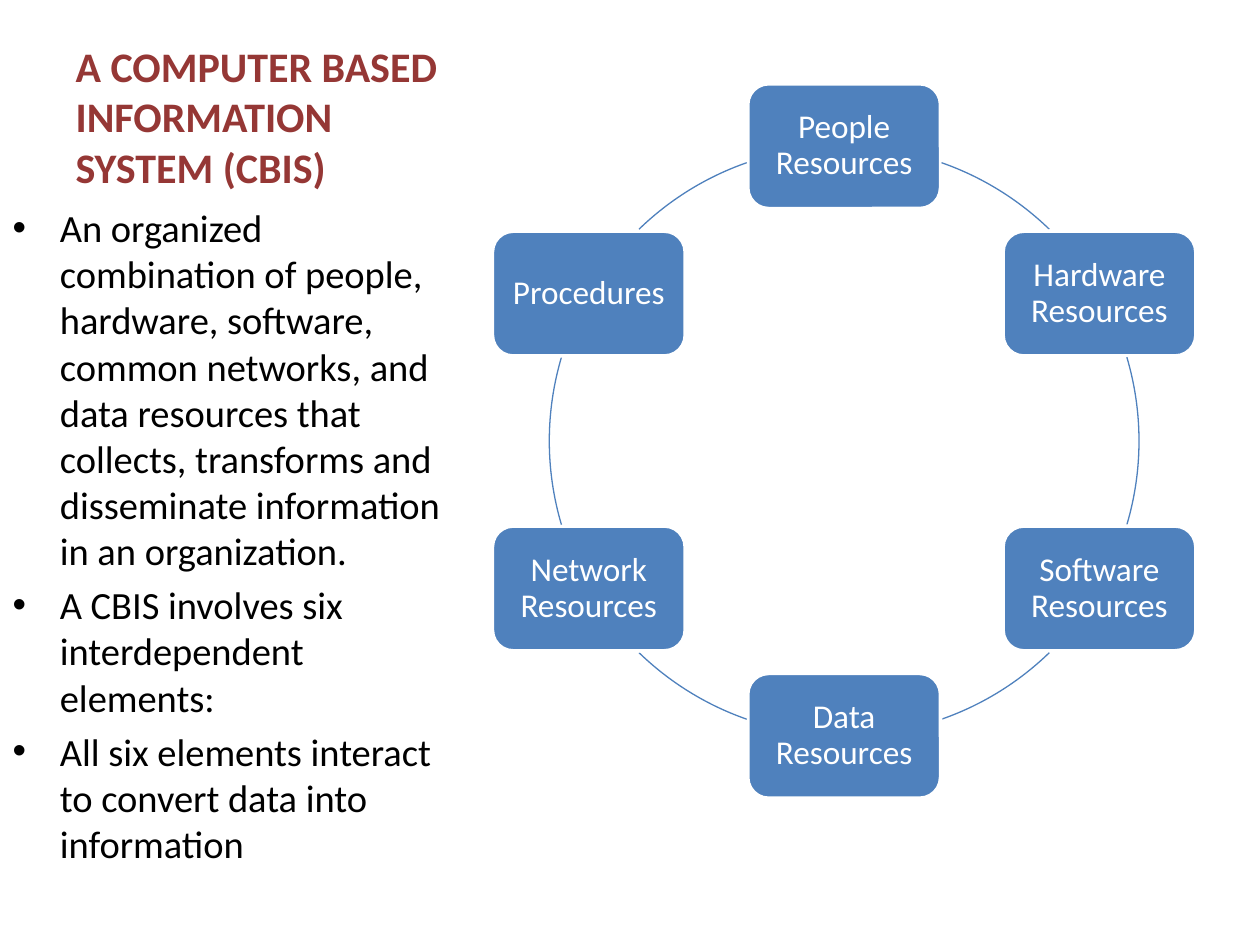
"""Builds the slide on the six elements of a computer based information system."""
import math
from dataclasses import dataclass

from pptx import Presentation
from pptx import util as u
from pptx.dml.color import RGBColor
from pptx.enum import shapes, text

BLUE, WHITE, BLACK, RED = "4F81BD", "FFFFFF", "000000", "953735"
CENTER_X, CENTER_Y, RADIUS = 6.7, 3.5, 2.34
NODE_W, NODE_H = 1.53, 0.99
POINTS = [
    "An organized combination of people, hardware, software, common networks, and "
    "data resources that collects, transforms and disseminate information in an organization.",
    "A CBIS involves six interdependent elements:",
    "All six elements interact to convert data into information",
]


@dataclass
class Element:
    label: str
    angle: float
    arc_start: float
    arc_end: float


ELEMENTS = [
    Element("People Resources", 270, 289.3, 314.1),
    Element("Hardware Resources", 330, 343.5, 16.5),
    Element("Software Resources", 30, 45.9, 70.7),
    Element("Data Resources", 90, 109.3, 134.1),
    Element("Network Resources", 150, 163.5, 196.5),
    Element("Procedures", 210, 225.9, 250.7),
]


def color(target, value: str) -> None:
    target.rgb = RGBColor.from_string(value)


def apply(target, formats: dict) -> None:
    for name, value in formats.items():
        setattr(target, name, value)


def format_font(font, size: float, value: str, bold: bool = False) -> None:
    apply(font, {"name": "Calibri", "size": u.Pt(size), "bold": bold})
    color(font.color, value)


def place(placeholder, left: float, top: float, width: float, height: float) -> None:
    apply(placeholder, {"left": u.Inches(left), "top": u.Inches(top),
                        "width": u.Inches(width), "height": u.Inches(height)})


def draw_node(slide, element: Element) -> None:
    angle = math.radians(element.angle)
    left = CENTER_X + RADIUS * math.cos(angle) - NODE_W / 2
    top = CENTER_Y + RADIUS * math.sin(angle) - NODE_H / 2
    node = slide.shapes.add_shape(shapes.MSO_SHAPE.ROUNDED_RECTANGLE, u.Inches(left),
                                  u.Inches(top), u.Inches(NODE_W), u.Inches(NODE_H))
    node.shadow.inherit = False
    node.fill.solid()
    color(node.fill.fore_color, BLUE)
    color(node.line.color, WHITE)
    node.line.width = u.Pt(2)
    frame = node.text_frame
    sides = ("left", "right", "top", "bottom")
    apply(frame, {f"margin_{side}": u.Inches(0.08) for side in sides})
    apply(frame, {"word_wrap": True, "vertical_anchor": text.MSO_ANCHOR.MIDDLE,
                  "text": element.label})
    label = frame.paragraphs[0]
    apply(label, {"alignment": text.PP_ALIGN.CENTER, "line_spacing": 0.9})
    format_font(label.runs[0].font, 19, WHITE)


def draw_arc(slide, element: Element) -> None:
    arc = slide.shapes.add_shape(
        shapes.MSO_SHAPE.ARC, u.Inches(CENTER_X - RADIUS), u.Inches(CENTER_Y - RADIUS),
        u.Inches(2 * RADIUS), u.Inches(2 * RADIUS))
    for index, degrees in enumerate((element.arc_start, element.arc_end)):
        arc.adjustments[index] = degrees * 0.6
    arc.shadow.inherit = False
    arc.fill.background()
    color(arc.line.color, BLUE)
    arc.line.width = u.Pt(0.75)


def write_title(title) -> None:
    place(title, 0.5, 0.3, 3.29, 1.27)
    frame = title.text_frame
    apply(frame, {"text": "A COMPUTER BASED INFORMATION SYSTEM (CBIS)",
                  "vertical_anchor": text.MSO_ANCHOR.BOTTOM,
                  "auto_size": text.MSO_AUTO_SIZE.NONE})
    heading = frame.paragraphs[0]
    heading.alignment = text.PP_ALIGN.LEFT
    format_font(heading.runs[0].font, 24, RED, True)


def write_points(body) -> None:
    place(body, 0, 1.57, 3.79, 5.13)
    frame = body.text_frame
    apply(frame, {"text": "\n".join(POINTS), "auto_size": text.MSO_AUTO_SIZE.NONE})
    for point in frame.paragraphs:
        format_font(point.runs[0].font, 22, BLACK)


def main() -> None:
    deck = Presentation()
    apply(deck, {"slide_width": u.Inches(10), "slide_height": u.Inches(7.5)})
    slide = deck.slides.add_slide(deck.slide_layouts[1])
    write_title(slide.shapes.title)
    write_points(slide.placeholders[1])
    for element in ELEMENTS:
        draw_node(slide, element)
        draw_arc(slide, element)
    deck.save("out.pptx")


if __name__ == "__main__":
    main()
